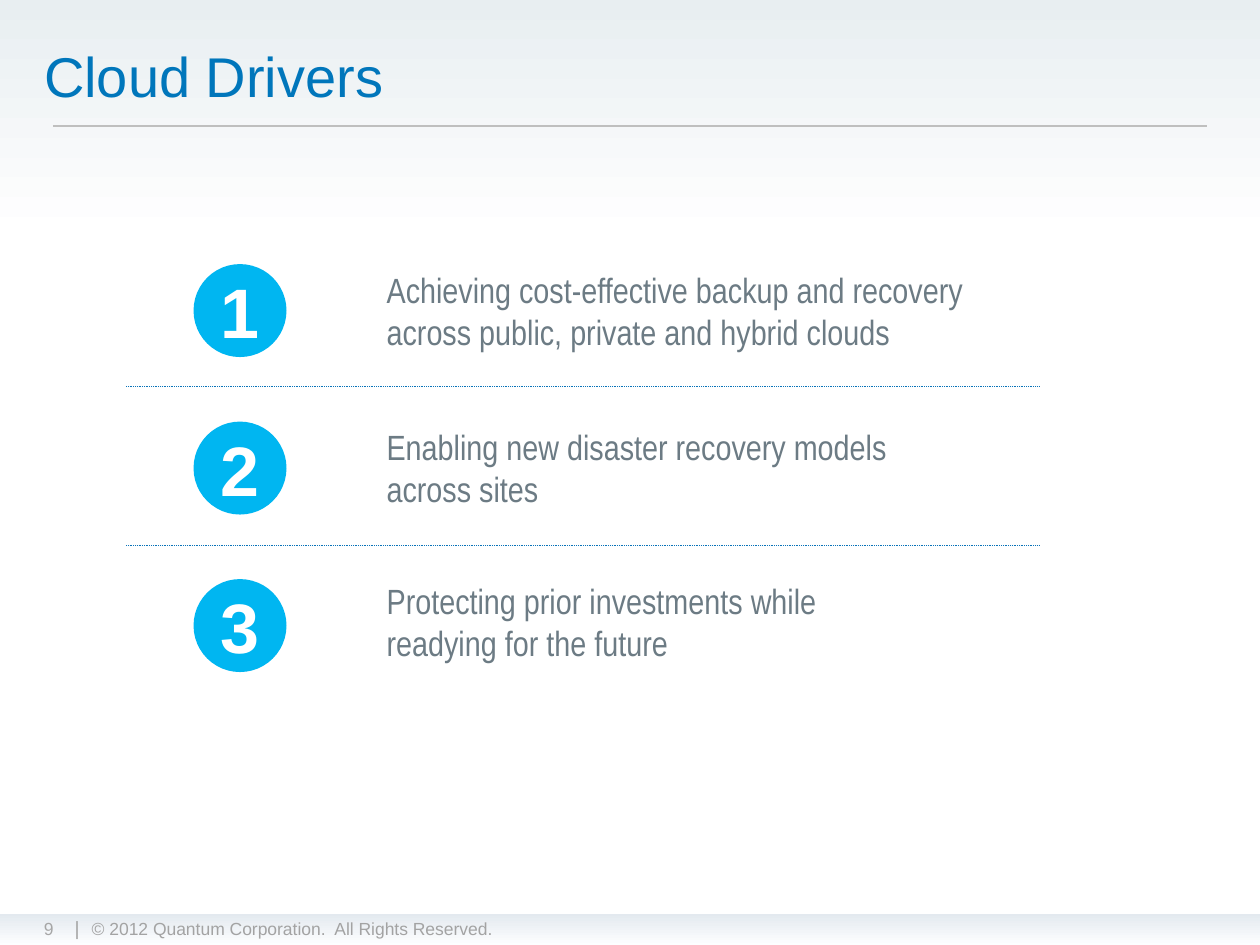
from lxml import etree
from pptx import Presentation
from pptx.dml.color import RGBColor
from pptx.enum.dml import MSO_LINE
from pptx.enum.shapes import MSO_CONNECTOR, MSO_SHAPE
from pptx.enum.text import MSO_ANCHOR, PP_ALIGN
from pptx.oxml.ns import qn
from pptx.util import Inches, Pt

STRAIGHT = MSO_CONNECTOR.STRAIGHT
MIDDLE, TOP = MSO_ANCHOR.MIDDLE, MSO_ANCHOR.TOP
LEFT, CENTER = PP_ALIGN.LEFT, PP_ALIGN.CENTER

TITLE = "Cloud Drivers"
# text, top and width of its box
DRIVERS = [
    ("Achieving cost-effective backup and recovery\vacross public, private and hybrid clouds", 2.08, 4.88),
    ("Enabling new disaster recovery models across sites", 3.33, 4.8),
    ("Protecting prior investments while readying for the future", 4.55, 4.25),
]
# text, left, top, width, height, size, colour
FOOTER = [
    ("© 2012 Quantum Corporation.  All Rights Reserved.", 0.63, 7.24, 5, 0.47, 10, "copyright"),
    ("|", 0.5, 7.22, 0.19, 0.27, 11, "copyright"),
    ("9", 0.25, 7.24, 0.51, 0.27, 10, "page number"),
]
COLORS = {
    "page top": "E8EEF1",
    "white": "FFFFFF",
    "footer top": "E3E9EF",
    "footer bottom": "FDFEFF",
    "copyright": "A3A3A3",
    "page number": "A6A6A6",
    "title": "0076BB",
    "title rule": "BFBFBF",
    "divider": "0973B9",
    "body": "6C7B84",
    "badge": "00B6F1",
}
BADGE_LEFT, BADGE_TOP, BADGE_SIZE = 1.55, 2.11, 0.71
ROW_PITCH = 1.25
DIVIDER_TOP, DIVIDER_PITCH = 3.07, 1.26


def color(name):
    return RGBColor.from_string(COLORS[name])


def fill_downward(fill, top, bottom, end=1.0):
    """Fade from top to bottom colour, reaching the latter at the fraction end."""
    fill.gradient()
    fill.gradient_angle = 270
    for stop, name, position in zip(fill.gradient_stops, (top, bottom), (0, end)):
        stop.color.rgb = color(name)
        stop.position = position


def write(shape, text, size, color_name, font="Arial", bold=False, align=LEFT, anchor=TOP):
    text_frame = shape.text_frame
    text_frame.text = text
    text_frame.word_wrap = True
    text_frame.vertical_anchor = anchor
    for paragraph in text_frame.paragraphs:
        paragraph.alignment = align
        for run in paragraph.runs:
            run.font.name = font
            run.font.size = Pt(size)
            run.font.bold = bold
            run.font.color.rgb = color(color_name)


def add_text(slide, left, top, width, height, *content, **style):
    box = slide.shapes.add_textbox(Inches(left), Inches(top), Inches(width), Inches(height))
    write(box, *content, **style)


def add_rule(slide, left, right, top, color_name, width):
    rule = slide.shapes.add_connector(STRAIGHT, Inches(left), Inches(top), Inches(right), Inches(top))
    rule.line.color.rgb = color(color_name)
    rule.line.width = Pt(width)
    etree.SubElement(rule.element.spPr, qn("a:effectLst"))
    return rule


def add_badge(slide, number, top):
    badge = slide.shapes.add_shape(
        MSO_SHAPE.ROUNDED_RECTANGLE,
        Inches(BADGE_LEFT), Inches(top), Inches(BADGE_SIZE), Inches(BADGE_SIZE),
    )
    badge.adjustments[0] = 0.5
    badge.shadow.inherit = False
    badge.fill.solid()
    badge.fill.fore_color.rgb = color("badge")
    badge.line.color.rgb = color("badge")
    badge.line.width = Pt(2)
    text_frame = badge.text_frame
    text_frame.margin_left = text_frame.margin_right = 0
    text_frame.margin_top = text_frame.margin_bottom = 0
    write(badge, str(number), 40, "white", bold=True, align=CENTER, anchor=MIDDLE)


def add_frame(slide):
    """Add the background, footer, title and title rule."""
    fill_downward(slide.background.fill, "page top", "white", 0.25)
    band = slide.shapes.add_shape(MSO_SHAPE.RECTANGLE, 0, Inches(7.25), Inches(10), Inches(0.25))
    band.shadow.inherit = False
    band.line.fill.background()
    fill_downward(band.fill, "footer top", "footer bottom")
    for text, left, top, width, height, size, color_name in FOOTER:
        add_text(slide, left, top, width, height, text, size, color_name)
    add_rule(slide, 0.42, 9.58, 1, "title rule", 0.75)

    title = slide.shapes.title
    title.left, title.top = Inches(0.25), Inches(0.25)
    title.width, title.height = Inches(9.29), Inches(0.7)
    write(title, TITLE, 32, "title", anchor=MIDDLE)


def main():
    presentation = Presentation()
    presentation.slide_width, presentation.slide_height = Inches(10), Inches(7.5)
    slide = presentation.slides.add_slide(presentation.slide_layouts[5])
    add_frame(slide)

    for row, (text, top, width) in enumerate(DRIVERS):
        add_text(slide, 2.97, top, width, 0.77, text, 20, "body", font="Arial Narrow")
        add_badge(slide, row + 1, BADGE_TOP + row * ROW_PITCH)
        if row < len(DRIVERS) - 1:
            divider = add_rule(slide, 1, 8.25, DIVIDER_TOP + row * DIVIDER_PITCH, "divider", 0.5)
            divider.line.dash_style = MSO_LINE.ROUND_DOT

    presentation.save("out.pptx")


if __name__ == "__main__":
    main()
